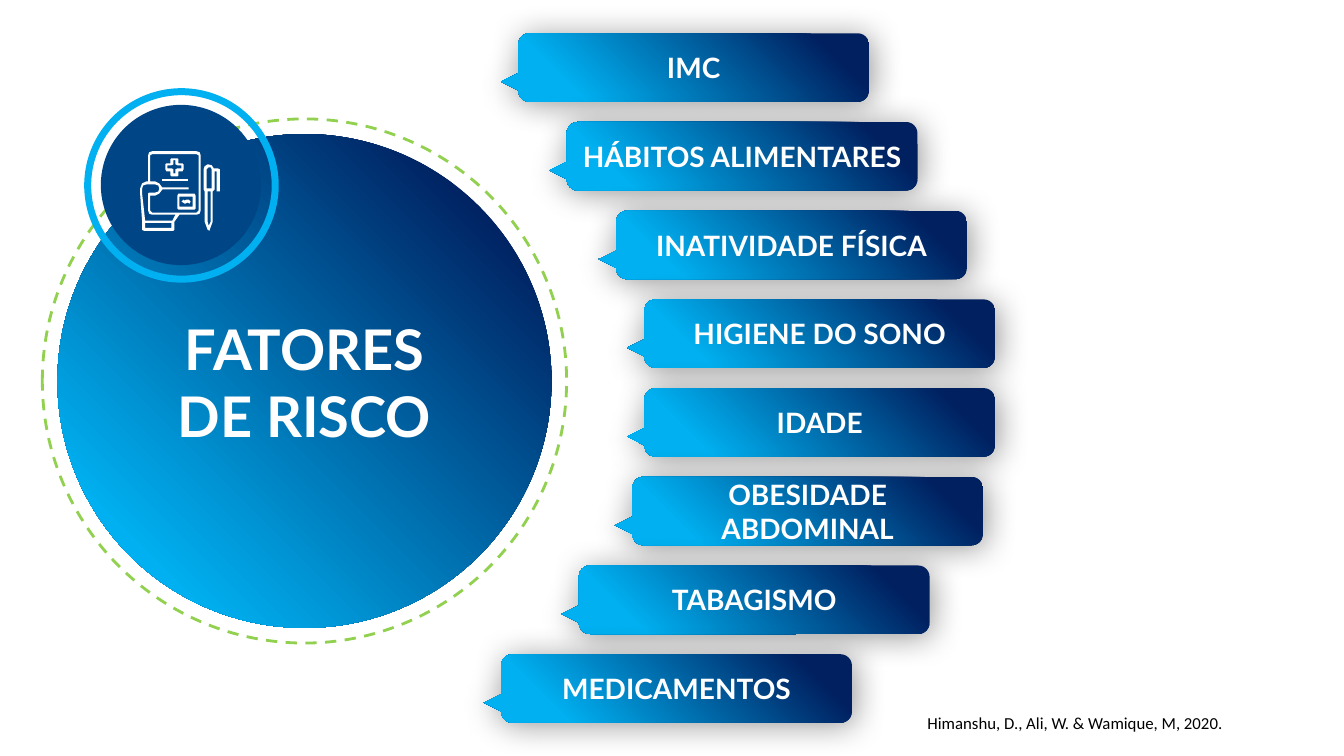
from pptx import Presentation
from pptx.dml.color import RGBColor
from pptx.enum.dml import MSO_LINE
from pptx.enum.shapes import MSO_SHAPE
from pptx.enum.text import MSO_ANCHOR, PP_ALIGN
from pptx.oxml import parse_xml
from pptx.oxml.ns import nsdecls, qn
from pptx.util import Inches, Pt

SKY, NAVY, WHITE = "00B0F0", "002060", "FFFFFF"

RISK_FACTORS = [
    ("IMC", 5.14),
    ("HÁBITOS ALIMENTARES", 5.62),
    ("INATIVIDADE FÍSICA", 6.11),
    ("HIGIENE DO SONO", 6.39),
    ("IDADE", 6.39),
    ("OBESIDADE ABDOMINAL", 6.27),
    ("TABAGISMO", 5.74),
    ("MEDICAMENTOS", 4.97),
]
FIRST_TOP, ROW_STEP = 0.33, 0.88

# Outlines of the icon, in hundredths of an inch on the slide.
HAND_AND_RECORD = [
    [(195, 150), (151, 150), (148, 151), (147, 154), (147, 180), (145, 180),
     (141, 182), (139, 187), (139, 192), (141, 220), (141, 228), (143, 229),
     (172, 229), (173, 228), (173, 220), (178, 213), (195, 213), (198, 212),
     (199, 209), (199, 154), (198, 151)],
    [(170, 226), (144, 226), (144, 221), (170, 221)],
    [(171, 219), (144, 219), (141, 192), (141, 187), (142, 184), (145, 183),
     (154, 183), (157, 184), (158, 187), (157, 190), (154, 191), (148, 191),
     (147, 192), (147, 209), (148, 212), (151, 213), (174, 213)],
    [(197, 209), (195, 211), (151, 211), (149, 209), (149, 194), (154, 194),
     (158, 192), (161, 188), (187, 188), (187, 186), (161, 186), (158, 182),
     (154, 180), (149, 180), (149, 154), (151, 153), (195, 153), (197, 154)],
]
CROSS = [
    [(165, 170), (169, 170), (169, 174), (170, 175), (176, 175), (177, 174),
     (177, 170), (181, 170), (182, 168), (182, 163), (181, 162), (177, 162),
     (177, 158), (176, 157), (170, 157), (169, 158), (169, 162), (165, 162),
     (164, 163), (164, 168)],
    [(166, 164), (170, 164), (172, 163), (172, 159), (174, 159), (174, 163),
     (176, 164), (180, 164), (180, 167), (176, 167), (174, 168), (174, 172),
     (172, 172), (172, 168), (170, 167), (166, 167)],
]
PEN = [
    [(216, 167), (212, 167), (210, 164), (206, 163), (203, 165), (202, 168),
     (202, 188), (203, 190), (203, 220), (206, 228), (208, 229), (208, 228),
     (211, 220), (211, 190), (213, 188), (213, 170), (215, 170), (215, 190),
     (218, 190), (218, 168)],
    [(209, 220), (207, 224), (206, 220), (206, 190), (209, 190)],
    [(210, 187), (205, 187), (205, 168), (207, 166), (209, 166), (210, 168)],
]
CARD = [
    [(193, 192), (177, 192), (176, 194), (176, 207), (177, 208), (193, 208),
     (194, 207), (194, 194)],
    [(191, 205), (178, 205), (178, 195), (191, 195)],
]
SIGNATURE = [[(189, 200), (188, 202), (186, 201), (184, 202), (183, 202),
              (180, 200), (182, 198), (183, 199), (185, 198), (187, 198)]]
RECORD_LINE = [[(161, 178), (187, 178), (187, 180), (161, 180)]]


def rgb(color):
    return RGBColor.from_string(color)


def write(shape, *lines, size, font="Lato", color=WHITE, bold=True,
          align=PP_ALIGN.CENTER, anchor=MSO_ANCHOR.MIDDLE):
    frame = shape.text_frame
    frame.word_wrap = True
    frame.vertical_anchor = anchor
    frame.text = "\n".join(lines)
    for paragraph in frame.paragraphs:
        paragraph.alignment = align
        paragraph.font.size = Pt(size)
        paragraph.font.name = font
        paragraph.font.bold = bold
        paragraph.font.color.rgb = rgb(color)


def add_text(slide, left, top, width, height, *lines, **text_format):
    box = slide.shapes.add_textbox(*map(Inches, (left, top, width, height)))
    write(box, *lines, **text_format)


def add_plain(slide, kind, left, top, width, height):
    """Add a preset shape without fill, line or shadow."""
    shape = slide.shapes.add_shape(kind, *map(Inches, (left, top, width, height)))
    shape.fill.background()
    shape.line.fill.background()
    shape.shadow.inherit = False
    return shape


def add_circle(slide, left, top, diameter):
    return add_plain(slide, MSO_SHAPE.OVAL, left, top, diameter, diameter)


def outline(shape, color, width, dash=None):
    shape.line.color.rgb = rgb(color)
    shape.line.width = Pt(width)
    shape.line.dash_style = dash


def fill_glow(shape):
    """Fill with a radial gradient that spreads from the lower left corner."""
    properties = shape.element.spPr
    gradient = parse_xml(
        f'<a:gradFill {nsdecls("a")} rotWithShape="1"><a:gsLst>'
        f'<a:gs pos="16000"><a:srgbClr val="{SKY}"/></a:gs>'
        f'<a:gs pos="87000"><a:srgbClr val="{NAVY}"/></a:gs></a:gsLst>'
        '<a:path path="circle"><a:fillToRect t="100000" r="100000"/></a:path>'
        '</a:gradFill>')
    properties.replace(properties.find(qn("a:noFill")), gradient)


def cast_shadow(shape):
    shape.element.spPr.find(qn("a:effectLst")).append(parse_xml(
        f'<a:outerShdw {nsdecls("a")} blurRad="{Pt(23)}" dist="{Pt(3)}" '
        'dir="2700000" algn="tl" rotWithShape="0"><a:srgbClr val="000000">'
        '<a:alpha val="40000"/></a:srgbClr></a:outerShdw>'))


def add_factor(slide, label, left, top):
    callout = add_plain(slide, MSO_SHAPE.ROUNDED_RECTANGULAR_CALLOUT,
                        left, top, 3.48, 0.68)
    for index, value in enumerate((-0.549, 0.206, 0.167)):
        callout.adjustments[index] = value
    fill_glow(callout)
    cast_shadow(callout)
    write(callout, label, size=20)


def add_icon_part(slide, contours):
    """Draw closed contours as one white shape; inner contours are holes."""
    first, *holes = contours
    builder = slide.shapes.build_freeform(*first[0], scale=Inches(0.01))
    builder.add_line_segments(first[1:], close=True)
    for hole in holes:
        builder.move_to(*hole[0])
        builder.add_line_segments(hole[1:], close=True)
    part = builder.convert_to_shape()
    part.fill.solid()
    part.fill.fore_color.rgb = rgb(WHITE)
    part.line.fill.background()
    part.shadow.inherit = False


def add_badge(slide):
    disc = add_circle(slide, 1, 1.04, 1.59)
    disc.fill.solid()
    disc.fill.fore_color.rgb = rgb("004686")
    outline(add_circle(slide, 0.87, 0.91, 1.86), SKY, 5)
    for contours in (HAND_AND_RECORD, CROSS, PEN, CARD, SIGNATURE, RECORD_LINE):
        add_icon_part(slide, contours)


def main():
    deck = Presentation()
    deck.slide_width, deck.slide_height = Inches(13.33), Inches(7.5)
    slide = deck.slides.add_slide(deck.slide_layouts[6])

    fill_glow(add_circle(slide, 0.57, 1.33, 4.9))
    outline(add_circle(slide, 0.42, 1.18, 5.2), "92D050", 2, MSO_LINE.DASH)
    add_text(slide, 1.07, 3.07, 3.9, 1.45, "FATORES", "DE RISCO",
             size=40, anchor=MSO_ANCHOR.TOP)
    for row, (label, left) in enumerate(RISK_FACTORS):
        add_factor(slide, label, left, FIRST_TOP + row * ROW_STEP)
    add_badge(slide)
    add_text(slide, 9.1, 7.02, 3.21, 0.3,
             "Himanshu, D., Ali, W. & Wamique, M, 2020.", size=12,
             font="Calibri", color="000000", bold=False,
             align=PP_ALIGN.LEFT, anchor=MSO_ANCHOR.TOP)
    deck.save("out.pptx")


if __name__ == "__main__":
    main()
